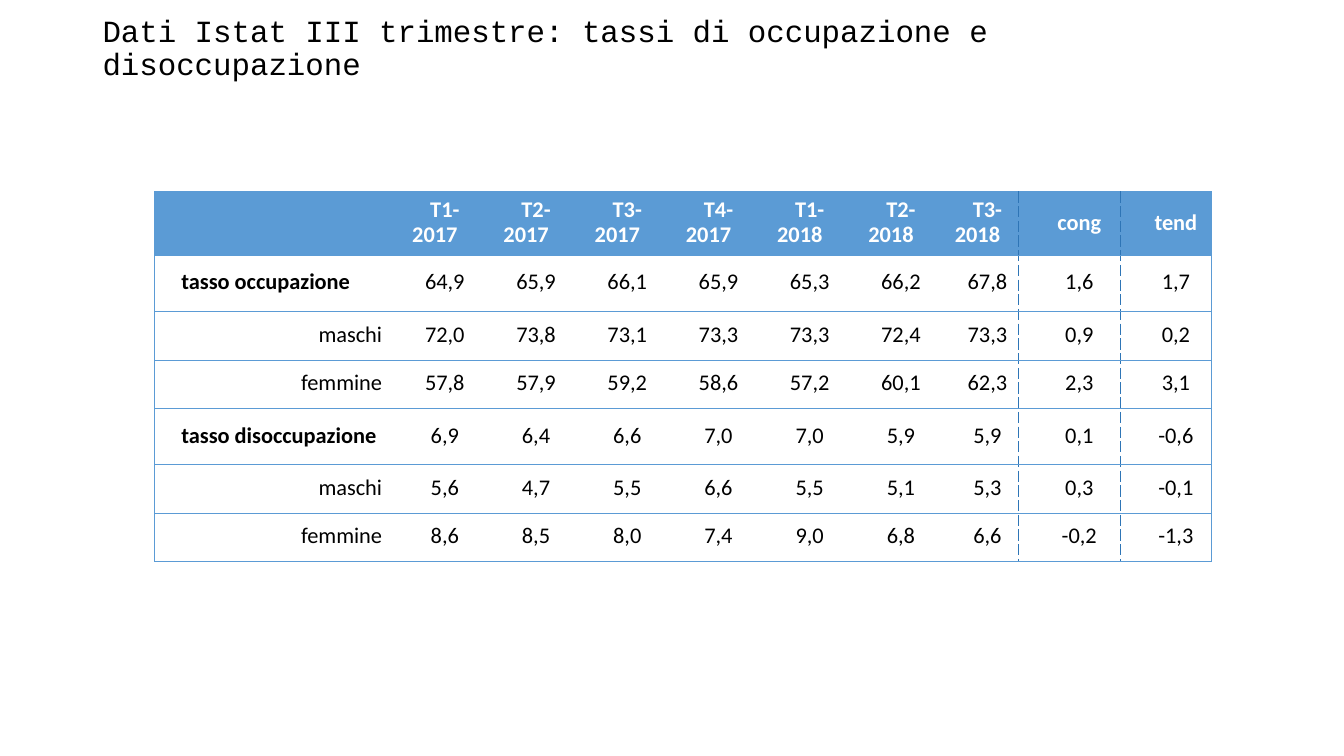
from lxml.etree import SubElement
from pptx import Presentation
from pptx.dml.color import RGBColor
from pptx.enum.text import MSO_ANCHOR, MSO_AUTO_SIZE, PP_ALIGN
from pptx.oxml.ns import qn
from pptx.util import Cm, Pt

# Content
TITLE = "Dati Istat III trimestre: tassi di occupazione e disoccupazione"
HEAD = ["", "T1-2017", "T2-2017", "T3-2017", "T4-2017",
        "T1-2018", "T2-2018", "T3-2018", "cong", "tend"]
RATES = [
    ["tasso occupazione", "64,9", "65,9", "66,1", "65,9", "65,3", "66,2", "67,8", "1,6", "1,7"],
    ["maschi", "72,0", "73,8", "73,1", "73,3", "73,3", "72,4", "73,3", "0,9", "0,2"],
    ["femmine", "57,8", "57,9", "59,2", "58,6", "57,2", "60,1", "62,3", "2,3", "3,1"],
    ["tasso disoccupazione", "6,9", "6,4", "6,6", "7,0", "7,0", "5,9", "5,9", "0,1", "-0,6"],
    ["maschi", "5,6", "4,7", "5,5", "6,6", "5,5", "5,1", "5,3", "0,3", "-0,1"],
    ["femmine", "8,6", "8,5", "8,0", "7,4", "9,0", "6,8", "6,6", "-0,2", "-1,3"],
]
COLORS = {"blue": "5B9BD5", "dash": "2E75B6", "text": "000000", "white": "FFFFFF"}

# Sizes in centimetres
WIDTHS = [5.92] + [2.3] * 6 + [2.06, 2.57, 2.3]
HEIGHTS = [1.6] + [1.42, 1.22, 1.22] * 2
LEFT, TOP = 3.89, 4.83
DASHED = (8, 9)  # column edges with a dashed rule

SOLID = (COLORS["blue"], 0.5, "solid")
BROKEN = (COLORS["dash"], 1, "dash")


def write(par, text, font, size, color, bold=False):
    run = par.add_run()
    run.text = text
    run.font.name = font
    run.font.size = Pt(size)
    run.font.bold = bold
    run.font.color.rgb = RGBColor.from_string(COLORS[color])


def border(cell, sides):
    props = cell._tc.get_or_add_tcPr()
    for i, (tag, style) in enumerate(sides.items()):
        line = SubElement(props, qn("a:" + tag))
        props.insert(i, line)  # borders come before the fill
        if style is None:
            SubElement(line, qn("a:noFill"))
            continue
        color, width, dash = style
        line.set("w", str(Pt(width)))
        fill = SubElement(line, qn("a:solidFill"))
        SubElement(fill, qn("a:srgbClr")).set("val", color)
        SubElement(line, qn("a:prstDash")).set("val", dash)


def edge(col):
    if col in (0, len(HEAD)):
        return SOLID
    return BROKEN if col in DASHED else None


def fill_cell(cell, row, col, text):
    head = row == 0
    group = text.startswith("tasso")
    if head:
        cell.fill.solid()
        cell.fill.fore_color.rgb = RGBColor.from_string(COLORS["blue"])
    else:
        cell.fill.background()
    border(cell, {"lnL": edge(col), "lnR": edge(col + 1), "lnT": SOLID, "lnB": SOLID})
    cell.vertical_anchor = MSO_ANCHOR.MIDDLE
    cell.margin_left = cell.margin_right = Cm(0.18)
    cell.margin_top = cell.margin_bottom = 0
    if not text:
        return
    par = cell.text_frame.paragraphs[0]
    if col or head:
        par.alignment = PP_ALIGN.CENTER
    else:
        par.alignment = PP_ALIGN.LEFT if group else PP_ALIGN.RIGHT
    par.line_spacing = Pt(18)
    par._p.get_or_add_pPr().set("indent", str(Cm(0.5)))
    write(par, text, "Calibri", 16, "white" if head else "text", head or group)


def main():
    deck = Presentation()
    deck.slide_width, deck.slide_height = Cm(33.87), Cm(19.05)
    slide = deck.slides.add_slide(deck.slide_layouts[5])

    # Title
    title = slide.shapes.title
    title.left, title.top = Cm(2.33), Cm(0.46)
    title.width, title.height = Cm(29.21), Cm(1.57)
    frame = title.text_frame
    frame.auto_size = MSO_AUTO_SIZE.NONE
    frame.word_wrap = True
    frame.vertical_anchor = MSO_ANCHOR.MIDDLE
    par = frame.paragraphs[0]
    par.alignment = PP_ALIGN.LEFT
    par.line_spacing = 0.9
    write(par, TITLE, "Courier New", 22, "text")

    # Table of rates
    rows = [HEAD] + RATES
    table = slide.shapes.add_table(len(rows), len(HEAD), Cm(LEFT), Cm(TOP),
                                   Cm(sum(WIDTHS)), Cm(sum(HEIGHTS))).table
    table.first_row = table.horz_banding = False
    for col, width in zip(table.columns, WIDTHS):
        col.width = Cm(width)
    for row, height in zip(table.rows, HEIGHTS):
        row.height = Cm(height)
    for r, texts in enumerate(rows):
        for c, text in enumerate(texts):
            fill_cell(table.cell(r, c), r, c, text)

    deck.save("out.pptx")


if __name__ == "__main__":
    main()
